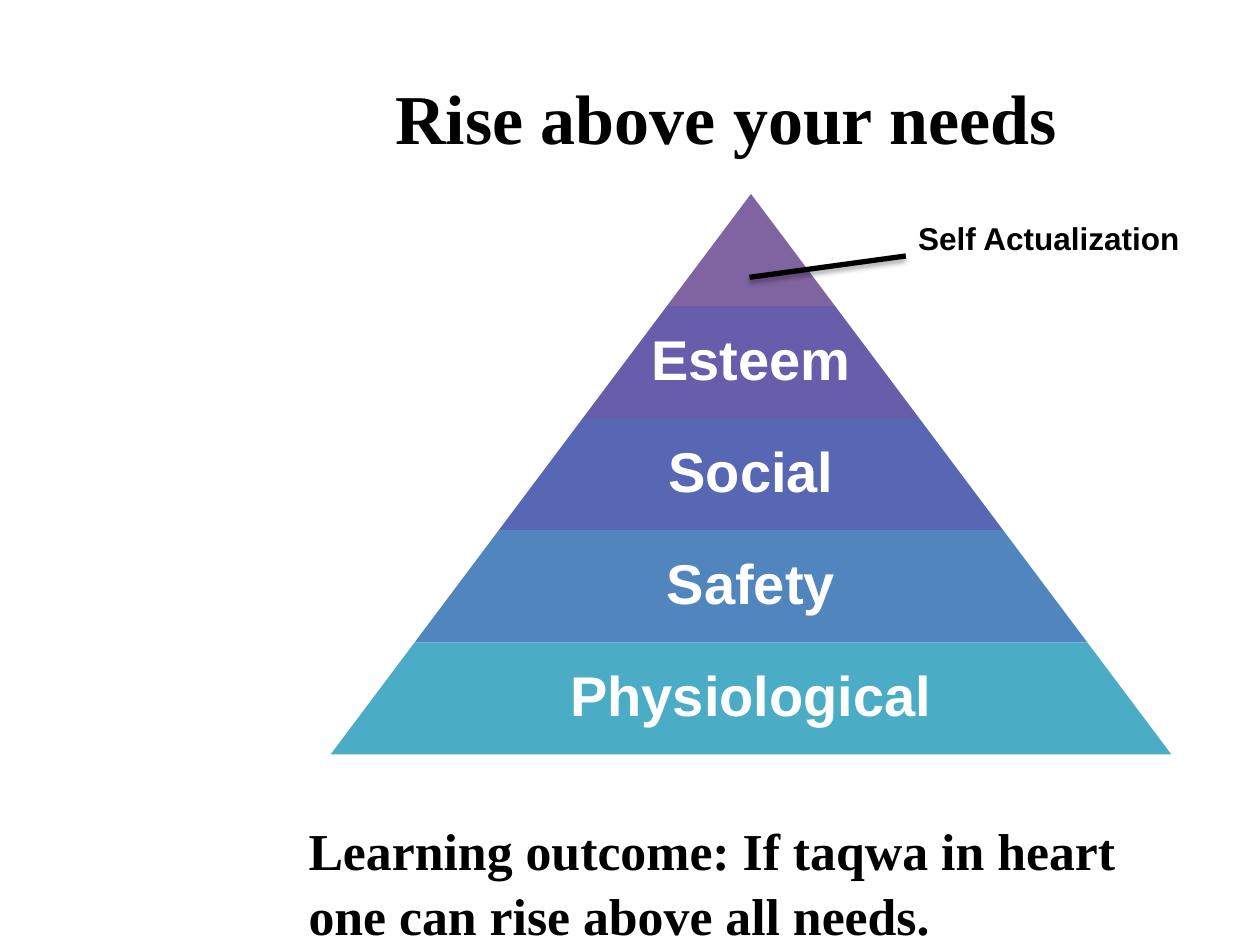
from lxml import etree
from pptx import Presentation
from pptx import util as u
from pptx.dml.color import RGBColor
from pptx.enum import shapes, text
from pptx.oxml import parse_xml
from pptx.oxml.ns import nsdecls

# Top to bottom: label beside or inside the level, fill
LEVELS = [
    ("", "8064A2"),
    ("Esteem", "685DAB"),
    ("Social", "5767B4"),
    ("Safety", "5185BD"),
    ("Physiological", "4BACC6"),
]
CENTER_X, PYRAMID_TOP = 15.14, 3.91
LEVEL_H, LEVEL_STEP = 2.26, 3.39
LABEL_SHARE = 0.65


def color(value):
    return RGBColor.from_string(value)


def write(tf, words, size, font, fill="000000", align=text.PP_ALIGN.LEFT):
    tf.word_wrap = True
    p = tf.paragraphs[0]
    p.alignment = align
    r = p.add_run()
    r.text = words
    r.font.name = font
    r.font.size = u.Pt(size)
    r.font.bold = True
    r.font.color.rgb = color(fill)
    return p


def add_title(s, words):
    sp = s.shapes.title
    sp.left, sp.top = u.Cm(5.13), u.Cm(0.76)
    sp.width, sp.height = u.Cm(19), u.Cm(3.17)
    sp.text_frame.vertical_anchor = text.MSO_ANCHOR.MIDDLE
    write(sp.text_frame, words, 40, "Times New Roman", align=text.PP_ALIGN.CENTER)


def add_text(s, words, box, size, font):
    sp = s.shapes.add_textbox(*map(u.Cm, box))
    return write(sp.text_frame, words, size, font)


def add_level(group, index, label, fill):
    width = LEVEL_STEP * (index + 1)
    top = PYRAMID_TOP + LEVEL_H * index
    sp = group.shapes.add_shape(
        shapes.MSO_SHAPE.TRAPEZOID, u.Cm(CENTER_X - width / 2), u.Cm(top),
        u.Cm(width), u.Cm(LEVEL_H))
    sp.adjustments[0] = LEVEL_STEP / 2 / LEVEL_H
    sp.shadow.inherit = False
    sp.fill.solid()
    sp.fill.fore_color.rgb = color(fill)
    sp.line.fill.background()
    if not label:
        return
    label_w = width * LABEL_SHARE
    tb = group.shapes.add_textbox(
        u.Cm(CENTER_X - label_w / 2), u.Cm(top), u.Cm(label_w), u.Cm(LEVEL_H))
    tf = tb.text_frame
    tf.margin_left = tf.margin_right = tf.margin_top = tf.margin_bottom = u.Cm(0.1)
    tf.vertical_anchor = text.MSO_ANCHOR.MIDDLE
    p = write(tf, label, 32, "Arial", "FFFFFF", text.PP_ALIGN.CENTER)
    p.line_spacing = 0.9


def add_pyramid(s):
    group = s.shapes.add_group_shape()
    for index, (label, fill) in enumerate(LEVELS):
        add_level(group, index, label, fill)


def add_callout_line(s, start, end):
    """Thick black line with a soft shadow below it."""
    line = s.shapes.add_connector(
        shapes.MSO_CONNECTOR.STRAIGHT, *map(u.Cm, start + end))
    line.line.color.rgb = color("000000")
    line.line.width = u.Pt(3)
    effects = parse_xml(f"<a:effectLst {nsdecls('a')}/>")
    shadow = etree.SubElement(
        effects, effects.tag.replace("effectLst", "outerShdw"),
        blurRad=str(u.Pt(3.1)), dist=str(u.Pt(1.8)), dir="5400000", rotWithShape="0")
    black = etree.SubElement(
        shadow, effects.tag.replace("effectLst", "srgbClr"), val="000000")
    etree.SubElement(black, effects.tag.replace("effectLst", "alpha"), val="35000")
    line._element.spPr.append(effects)


def main():
    prs = Presentation()
    prs.slide_width, prs.slide_height = u.Cm(25.4), u.Cm(19.05)
    s = prs.slides.add_slide(prs.slide_layouts[5])
    add_title(s, "Rise above your needs")
    outcome = add_text(
        s, "Learning outcome: If taqwa in heart one can rise above all needs.",
        (5.97, 16.33, 18.16, 2.7), 29.6, "Times New Roman")
    outcome.line_spacing = 1.04
    add_pyramid(s)
    add_text(s, "Self Actualization", (18.26, 4.29, 7.14, 1.8), 18, "Arial")
    add_callout_line(s, (15.11, 5.59), (18.26, 5.16))
    prs.save("out.pptx")


if __name__ == "__main__":
    main()
